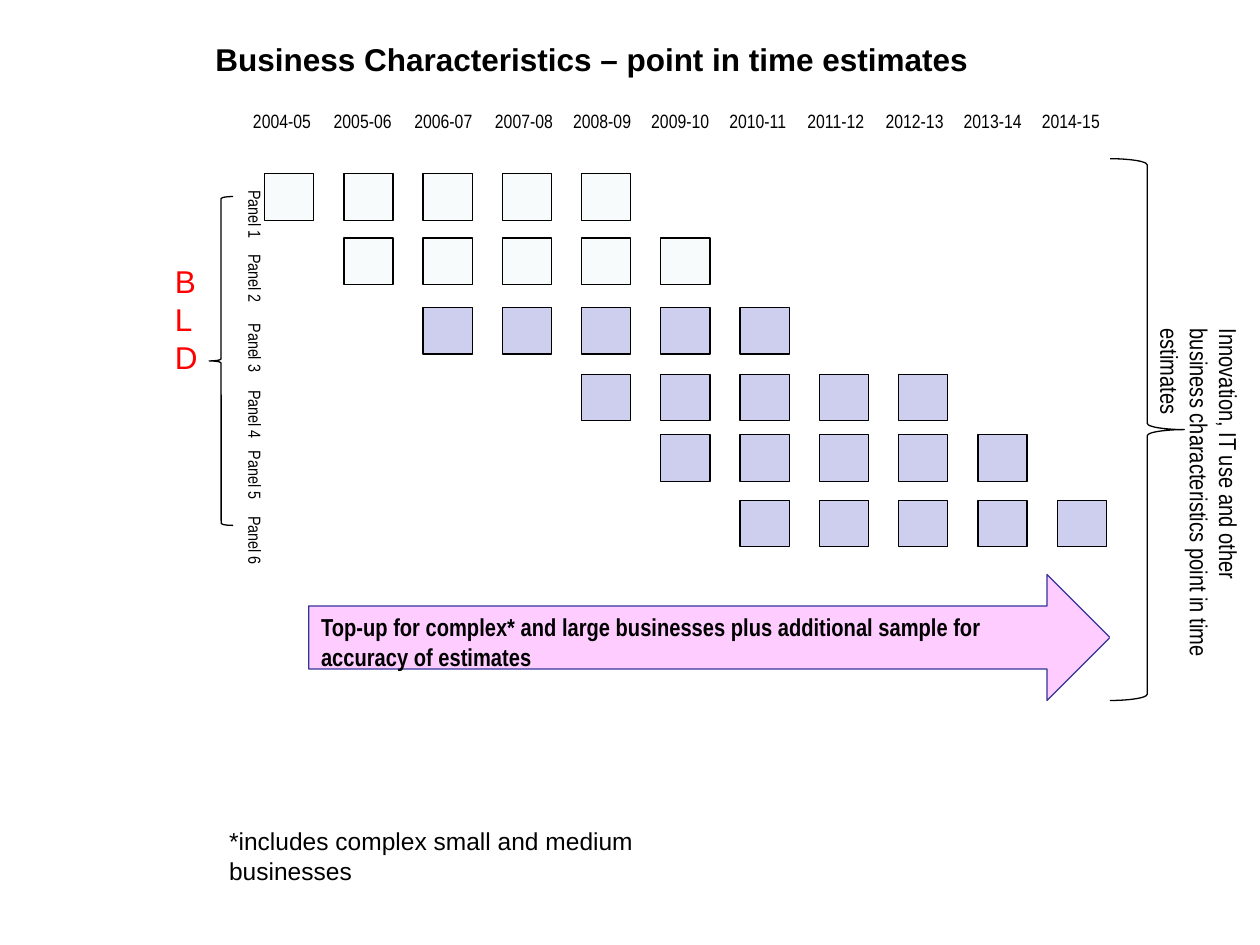
from collections import namedtuple
from dataclasses import dataclass

from lxml.etree import SubElement
from pptx import Presentation
from pptx.dml.color import RGBColor
from pptx.enum.shapes import MSO_SHAPE as Shape
from pptx.enum.text import MSO_ANCHOR as Anchor
from pptx.enum.text import MSO_AUTO_SIZE as AutoSize
from pptx.enum.text import PP_ALIGN as Align
from pptx.util import Inches, Pt


@dataclass(frozen=True)
class Theme:
    black: str = "000000"
    white: str = "FFFFFF"
    red: str = "FF0000"
    early_panel: str = "F8FBFC"
    later_panel: str = "CECEEF"
    arrow_fill: str = "FFCCFF"
    arrow_line: str = "333399"
    wide: str = "Arial"
    narrow: str = "Arial Narrow"
    heading_size: int = 18
    note_size: int = 14
    year_size: int = 11
    panel_size: int = 10
    line_width: float = 0.75


THEME = Theme()
Box = namedtuple("Box", "left top width height")

YEARS = ["2004-05", "2005-06", "2006-07", "2007-08", "2008-09", "2009-10",
         "2010-11", "2011-12", "2012-13", "2013-14", "2014-15"]
YEARS_PER_PANEL = 5

# Panel name, top within the grid, index of first year, fill
PANELS = [
    ("Panel 1", 0, 0, THEME.early_panel),
    ("Panel 2", 0.51, 1, THEME.early_panel),
    ("Panel 3", 1.06, 2, THEME.later_panel),
    ("Panel 4", 1.59, 4, THEME.later_panel),
    ("Panel 5", 2.07, 5, THEME.later_panel),
    ("Panel 6", 2.59, 6, THEME.later_panel),
]


def place(box):
    return [Inches(length) for length in box]


def write(shape, text, size, font=THEME.narrow, color=THEME.black, bold=False):
    frame = shape.text_frame
    frame.text = text
    frame.vertical_anchor = Anchor.TOP
    paragraph = frame.paragraphs[0]
    paragraph.alignment = Align.LEFT
    run_font = paragraph.runs[0].font
    run_font.name, run_font.size, run_font.bold = font, Pt(size), bold
    run_font.color.rgb = RGBColor.from_string(color)


def add_label(slide, box, text, size, wrap=False, direction=None, **style):
    label = slide.shapes.add_textbox(*place(box))
    write(label, text, size, **style)
    label.text_frame.word_wrap = wrap
    label.text_frame.auto_size = AutoSize.SHAPE_TO_FIT_TEXT
    if direction:
        label.element.txBody.bodyPr.set("vert", direction)


def add_outlined(slide, kind, box, fill, line=THEME.black):
    shape = slide.shapes.add_shape(kind, *place(box))
    shape.shadow.inherit = False
    shape.fill.solid()
    shape.fill.fore_color.rgb = RGBColor.from_string(fill)
    shape.line.color.rgb = RGBColor.from_string(line)
    shape.line.width = Pt(THEME.line_width)
    return shape


def set_title(slide, box):
    title = slide.shapes.title
    title.left, title.top, title.width, title.height = place(box)
    write(title, "Business Characteristics – point in time estimates",
          THEME.heading_size, THEME.wide, bold=True)
    title.text_frame.auto_size = AutoSize.NONE


def add_years(slide, box):
    # The first three columns are slightly wider than the rest
    left = box.left
    for index, year in enumerate(YEARS):
        add_label(slide, Box(left, box.top, 0.66, box.height), year,
                  THEME.year_size)
        left += 0.64 if index < 3 else 0.62


def add_panels(slide, box):
    cell_width, cell_height = 0.39, 0.37
    pitch = (box.width - cell_width) / (len(YEARS) - 1)
    for name, offset, first_year, fill in PANELS:
        top = box.top + offset
        add_label(slide, Box(box.left - 0.31, top + 0.03, 0.37, 0.49), name,
                  THEME.panel_size, direction="vert")
        for year in range(first_year, first_year + YEARS_PER_PANEL):
            cell = Box(box.left + year * pitch, top, cell_width, cell_height)
            add_outlined(slide, Shape.RECTANGLE, cell, fill)


def add_panel_group(slide, box):
    add_label(slide, Box(box.left, box.top + 0.47, 0.64, 1.41), "BLD",
              THEME.heading_size, direction="wordArtVert", font=THEME.wide,
              color=THEME.red)
    brace = Box(box.left + box.width - 0.19, box.top, 0.19, box.height)
    add_outlined(slide, Shape.LEFT_BRACE, brace, THEME.white)


def add_top_up(slide, box):
    arrow = add_outlined(slide, Shape.RIGHT_ARROW, box, THEME.arrow_fill,
                         THEME.arrow_line)
    write(arrow, "Top-up for complex* and large businesses plus additional "
          "sample for accuracy of estimates", THEME.note_size, bold=True)
    arrow.text_frame.word_wrap = True


def add_estimates(slide, box):
    text_box = Box(box.left + 0.44, box.top + 1.25, 0.67, 2.82)
    add_label(slide, text_box, "Innovation, IT use and other business "
              "characteristics point in time estimates", THEME.note_size,
              wrap=True, direction="vert")
    brace = Box(box.left, box.top, 0.59, box.height)
    add_outlined(slide, Shape.RIGHT_BRACE, brace, THEME.white)


def add_footnote(slide, box):
    add_label(slide, box, "*includes complex small and medium businesses",
              THEME.note_size, wrap=True, font=THEME.wide)


def main():
    deck = Presentation()
    deck.slide_width, deck.slide_height = Inches(10), Inches(7.5)
    title_only = deck.slide_layouts[5]
    slide = deck.slides.add_slide(title_only)

    set_title(slide, Box(1.61, 0.27, 8.67, 0.5))
    add_years(slide, Box(1.91, 0.82, 6.92, 0.29))
    add_panels(slide, Box(2.1, 1.38, 6.68, 2.96))
    add_panel_group(slide, Box(1.29, 1.56, 0.56, 2.61))
    add_top_up(slide, Box(2.45, 4.56, 6.36, 1))
    add_footnote(slide, Box(1.72, 6.51, 4.06, 0.34))
    add_estimates(slide, Box(8.81, 1.26, 1.11, 4.3))
    deck.save("out.pptx")


if __name__ == "__main__":
    main()
